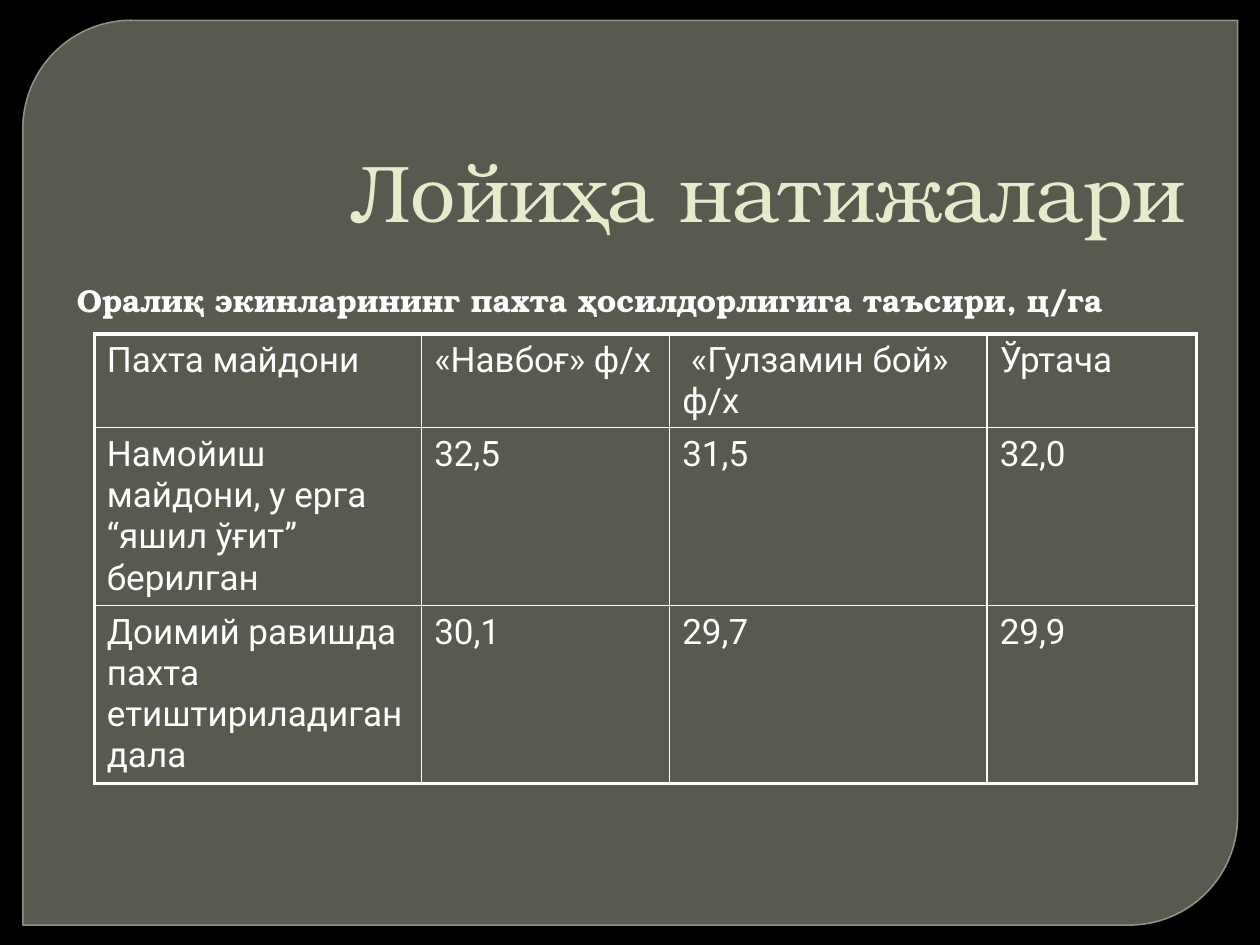
from lxml.etree import SubElement
from pptx import Presentation
from pptx.dml.color import RGBColor
from pptx.enum.shapes import MSO_SHAPE
from pptx.enum.text import MSO_ANCHOR, PP_ALIGN
from pptx.oxml.ns import qn
from pptx.util import Cm, Pt

BLACK = RGBColor(0x00, 0x00, 0x00)
WHITE = RGBColor(0xFF, 0xFF, 0xFF)
OLIVE = RGBColor(0x88, 0x8B, 0x7B)
OUTLINE = RGBColor(0x9D, 0xA0, 0x90)
CREAM = RGBColor(0xE7, 0xEA, 0xCB)
SERIF, SANS = "TeX Gyre Bonum", "Roboto"


def write(tf, text, font=SERIF, size=18, color=WHITE, bold=False, align=PP_ALIGN.LEFT):
    tf.word_wrap = True
    p = tf.paragraphs[0]
    p.alignment = align
    r = p.add_run()
    r.text = text
    r.font.name, r.font.size, r.font.bold = font, Pt(size), bold
    r.font.color.rgb = color


def set_border(cell, side, width):
    """Draw one side (L, R, T or B) of a cell; call before the cell's fill is set."""
    ln = SubElement(cell._tc.get_or_add_tcPr(), qn(f"a:ln{side}"), w=str(Pt(width)))
    fill = SubElement(ln, qn("a:solidFill"))
    SubElement(fill, qn("a:srgbClr"), val=str(WHITE))


prs = Presentation()
prs.slide_width, prs.slide_height = Cm(25.4), Cm(19.05)
s = prs.slides.add_slide(prs.slide_layouts[6])
s.background.fill.solid()
s.background.fill.fore_color.rgb = BLACK

# Panel with two rounded corners
panel = s.shapes.add_shape(MSO_SHAPE.ROUND_2_DIAG_RECTANGLE, Cm(0.46), Cm(0.41), Cm(24.49), Cm(18.24))
panel.adjustments[0], panel.adjustments[1] = 0.12, 0
panel.shadow.inherit = False
panel.fill.solid()
panel.fill.fore_color.rgb = OLIVE
panel.line.color.rgb = OUTLINE
panel.line.width = Pt(0.87)
colors = panel._element.spPr.iter(qn("a:srgbClr"))
for color, opacity in zip(list(colors), (65, 88)):
    SubElement(color, qn("a:alpha"), val=str(opacity * 1000))

# Title and subtitle
title = s.shapes.add_textbox(Cm(1.3), Cm(1.12), Cm(22.86), Cm(3.81))
title.text_frame.vertical_anchor = MSO_ANCHOR.BOTTOM
write(title.text_frame, "Лойиҳа натижалари", size=46, color=CREAM, align=PP_ALIGN.RIGHT)

subtitle = s.shapes.add_textbox(Cm(1.3), Cm(5.54), Cm(23.44), Cm(11.43))
write(subtitle.text_frame, "Оралиқ экинларининг пахта ҳосилдорлигига таъсири, ц/га", bold=True)

# Yield table
rows = [
    ["Пахта майдони", "«Навбоғ» ф/х", " «Гулзамин бой» ф/х", "Ўртача"],
    ["Намойиш майдони, у ерга “яшил ўғит” берилган", "32,5", "31,5", "32,0"],
    ["Доимий равишда пахта етиштириладиган дала", "30,1", "29,7", "29,9"],
]
col_widths = [6.6, 5, 6.4, 4.22]
row_heights = [1.19, 3.25, 3.25]
table = s.shapes.add_table(
    len(rows), len(col_widths), Cm(1.9), Cm(6.73), Cm(sum(col_widths)), Cm(sum(row_heights))
).table
table.first_row = table.horz_banding = False
for column, width in zip(table.columns, col_widths):
    column.width = Cm(width)
for row, height in zip(table.rows, row_heights):
    row.height = Cm(height)

for i, row in enumerate(rows):
    for j, text in enumerate(row):
        cell = table.cell(i, j)
        cell.margin_bottom = Cm(0.07)
        write(cell.text_frame, text, font=SANS, size=20)
        outer = {"L": j == 0, "R": j == len(row) - 1, "T": i == 0, "B": i == len(rows) - 1}
        for side, is_outer in outer.items():
            set_border(cell, side, 2.25 if is_outer else 1)
        cell.fill.background()

prs.save("out.pptx")
